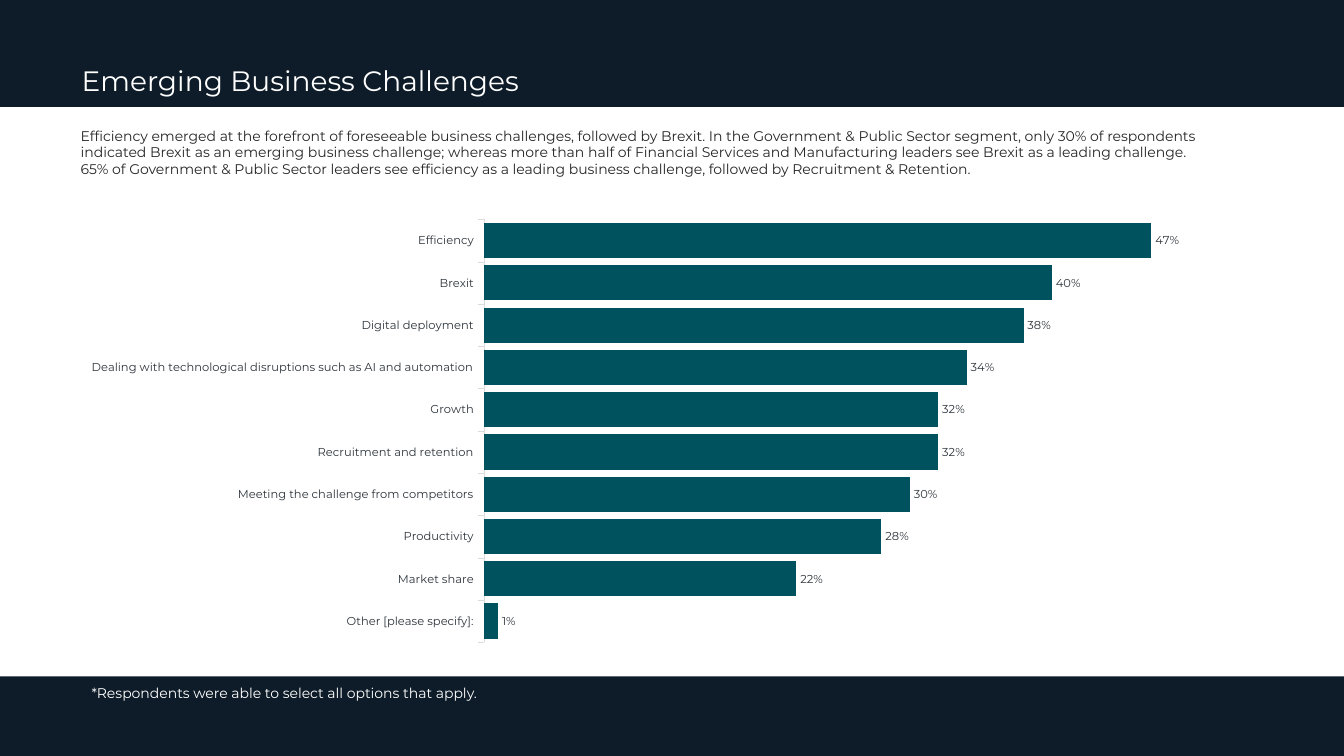
from lxml import etree
from pptx import Presentation
from pptx.chart.data import CategoryChartData
from pptx.dml.color import RGBColor
from pptx.enum.chart import XL_CHART_TYPE, XL_LABEL_POSITION, XL_TICK_LABEL_POSITION, XL_TICK_MARK
from pptx.enum.shapes import MSO_SHAPE
from pptx.enum.text import MSO_ANCHOR, MSO_AUTO_SIZE, PP_ALIGN
from pptx.oxml.ns import qn
from pptx.util import Inches, Pt

BAR = XL_CHART_TYPE.BAR_CLUSTERED
OUTSIDE_END = XL_LABEL_POSITION.OUTSIDE_END
LOW = XL_TICK_LABEL_POSITION.LOW
TICK_OUT, TICK_NONE = XL_TICK_MARK.OUTSIDE, XL_TICK_MARK.NONE
RECTANGLE = MSO_SHAPE.RECTANGLE
TOP = MSO_ANCHOR.TOP
NO_FIT = MSO_AUTO_SIZE.NONE
LEFT = PP_ALIGN.LEFT

FONT = "Montserrat"
COLORS = {
    "band": "0E1C29",
    "white": "FFFFFF",
    "body": "262626",
    "label": "2C333A",
    "axis": "DCDCDC",
    "bar": "00535E",
}
WIDTH, HEIGHT = 13.33, 7.5
INTRO = (
    "Efficiency emerged at the forefront of foreseeable business challenges, followed by Brexit. "
    "In the Government & Public Sector segment, only 30% of respondents indicated Brexit as an "
    "emerging business challenge; whereas more than half of Financial Services and Manufacturing "
    "leaders see Brexit as a leading challenge. 65% of Government & Public Sector leaders see "
    "efficiency as a leading business challenge, followed by Recruitment & Retention."
)
CHALLENGES = {
    "Other [please specify]:": 0.01,
    "Market share": 0.22,
    "Productivity": 0.28,
    "Meeting the challenge from competitors": 0.30,
    "Recruitment and retention": 0.32,
    "Growth": 0.32,
    "Dealing with technological disruptions such as AI and automation": 0.34,
    "Digital deployment": 0.38,
    "Brexit": 0.40,
    "Efficiency": 0.47,
}


def color(name):
    """Return the named palette colour."""
    return RGBColor.from_string(COLORS[name])


def style_font(font, size, color_name):
    """Apply the slide font with a size and a colour."""
    font.name = FONT
    font.size = Pt(size)
    font.color.rgb = color(color_name)


def place(shape, box):
    """Move a shape to a box given in inches."""
    shape.left, shape.top, shape.width, shape.height = map(Inches, box)


def add_band(page, box):
    """Draw a full-width dark band behind everything else."""
    band = page.shapes.add_shape(RECTANGLE, *map(Inches, box))
    band.shadow.inherit = False
    band.fill.solid()
    band.fill.fore_color.rgb = color("band")
    band.line.fill.background()
    page.shapes._spTree.insert(2, band._element)


def write_text(shape, box, text, size, color_name, inset=None, spacing=1.0):
    """Place one left-aligned paragraph in a text shape."""
    place(shape, box)
    frame = shape.text_frame
    frame.text = text
    frame.word_wrap = True
    frame.auto_size = NO_FIT
    frame.vertical_anchor = TOP
    if inset is not None:
        frame.margin_left = frame.margin_right = Inches(inset)
        frame.margin_top = frame.margin_bottom = Inches(inset)
    para = frame.paragraphs[0]
    properties = para._p.get_or_add_pPr()
    properties.set("marL", "0")
    properties.set("indent", "0")
    etree.SubElement(properties, qn("a:buNone"))
    para.alignment = LEFT
    para.line_spacing = spacing
    para.space_before = Pt(0)
    style_font(para.font, size, color_name)


def set_plot_area(chart, fractions):
    """Fix the inner plot area as fractions of the chart."""
    plot_area = chart._chartSpace.chart.plotArea
    for old in plot_area.findall(qn("c:layout")):
        plot_area.remove(old)
    layout = etree.Element(qn("c:layout"))
    manual = etree.SubElement(layout, qn("c:manualLayout"))
    settings = {"layoutTarget": "inner", "xMode": "edge", "yMode": "edge"}
    settings.update(zip("xywh", fractions))
    for tag, value in settings.items():
        etree.SubElement(manual, qn(f"c:{tag}")).set("val", str(value))
    plot_area.insert(0, layout)


def add_challenge_chart(page, box):
    """Draw the bar chart of challenges in its box."""
    data = CategoryChartData(number_format="0%")
    data.categories = list(CHALLENGES)
    data.add_series("Series 1", list(CHALLENGES.values()))
    chart = page.shapes.add_chart(BAR, *map(Inches, box), data).chart
    chart.has_legend = False
    chart.has_title = False
    style_font(chart.font, 8.2, "label")
    set_plot_area(chart, (0.36, 0.02, 0.62, 0.96))

    categories = chart.category_axis
    categories.major_tick_mark = TICK_OUT
    categories.minor_tick_mark = TICK_NONE
    categories.tick_label_position = LOW
    categories.format.line.color.rgb = color("axis")
    categories.format.line.width = Pt(0.25)
    style_font(categories.tick_labels.font, 8.2, "label")

    values = chart.value_axis
    values.minimum_scale, values.maximum_scale = 0, 0.5
    values.has_major_gridlines = False
    values.visible = False

    plot = chart.plots[0]
    plot.gap_width = 20
    plot.vary_by_categories = False
    plot.has_data_labels = True
    labels = plot.data_labels
    labels.show_value = True
    labels.number_format = "0%"
    labels.number_format_is_linked = False
    labels.position = OUTSIDE_END
    style_font(labels.font, 8.2, "label")
    bars = plot.series[0].format
    bars.fill.solid()
    bars.fill.fore_color.rgb = color("bar")


def add_header(page, box):
    """Fill the top band with the slide title."""
    left, top, _, height = box
    add_band(page, box)
    title_box = (left + 0.71, top + height - 0.44, 9.64, 0.56)
    write_text(page.shapes.title, title_box, "Emerging Business Challenges", 20, "white", spacing=0.9)


def add_content(page, box):
    """Stack the introduction above the chart."""
    left, top, width, height = box
    write_text(page.placeholders[1], (left + 0.09, top, 11.08, 0.83), INTRO, 10, "body", inset=0)
    add_challenge_chart(page, (left, top + 0.83, width, height - 0.83))


def add_footer(page, box):
    """Fill the bottom band with the footnote."""
    left, top, _, _ = box
    add_band(page, box)
    note_box = (left + 0.81, top + 0.03, 10.04, 0.28)
    note = page.shapes.add_textbox(*map(Inches, note_box))
    write_text(note, note_box, "*Respondents were able to select all options that apply.", 10, "white")


def main():
    """Build and save the deck."""
    deck = Presentation()
    deck.slide_width, deck.slide_height = Inches(WIDTH), Inches(HEIGHT)
    page = deck.slides.add_slide(deck.slide_layouts[1])
    add_header(page, (0, 0, WIDTH, 1.06))
    add_content(page, (0.71, 1.26, 11.36, 5.2))
    add_footer(page, (0, 6.71, WIDTH, HEIGHT - 6.71))
    deck.save("out.pptx")


if __name__ == "__main__":
    main()
